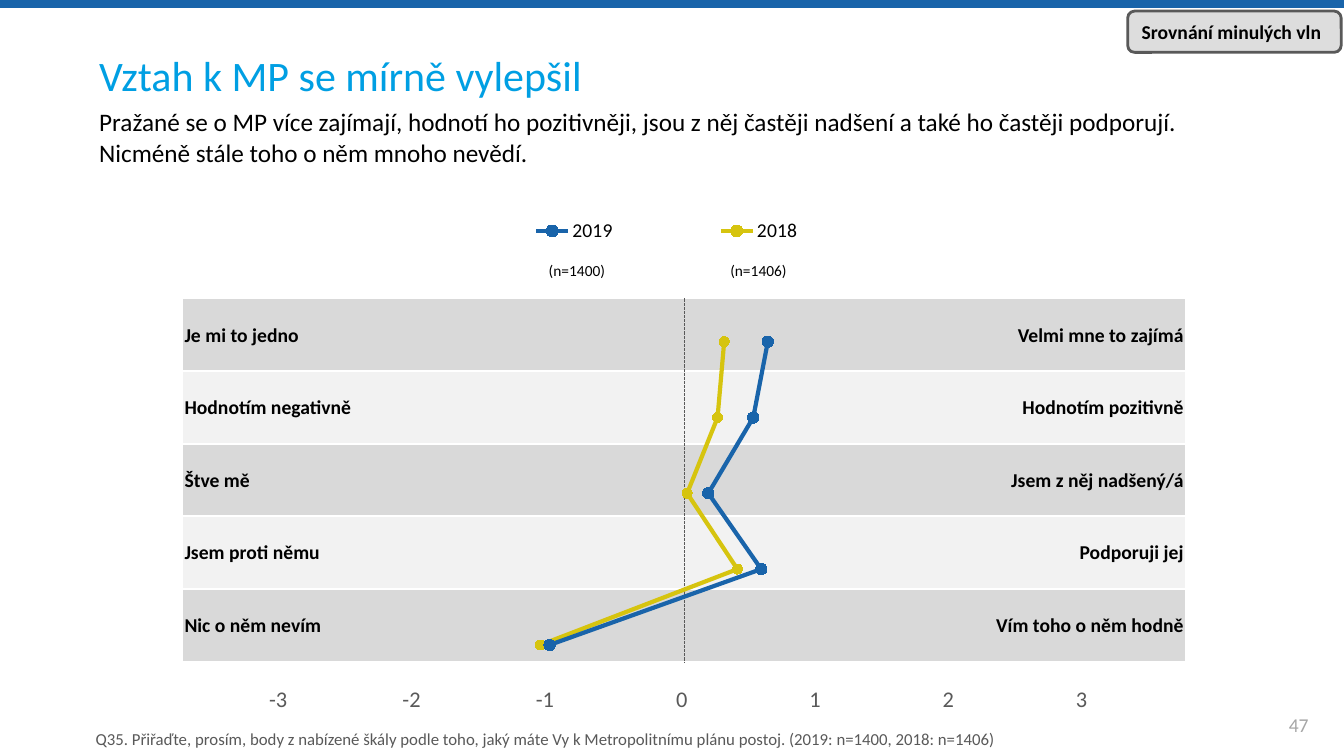
from dataclasses import dataclass

import pptx
import pptx.chart.data
import pptx.dml.color
import pptx.enum.chart
import pptx.enum.dml
import pptx.enum.shapes
import pptx.enum.text
import pptx.oxml
import pptx.oxml.ns
import pptx.util

Cm, Pt = pptx.util.Cm, pptx.util.Pt
RGB = pptx.dml.color.RGBColor.from_string
ALIGN, ANCHOR = pptx.enum.text.PP_ALIGN, pptx.enum.text.MSO_ANCHOR
SHAPE = pptx.enum.shapes.MSO_SHAPE
qn, nsdecls, parse_xml = pptx.oxml.ns.qn, pptx.oxml.ns.nsdecls, pptx.oxml.parse_xml


@dataclass(frozen=True)
class Theme:
    font: str = "Calibri"
    blue: str = "1964AA"
    cyan: str = "009FE3"
    yellow: str = "D6C40F"
    black: str = "000000"
    white: str = "FFFFFF"
    grey: str = "595959"
    pale: str = "A6A6A6"
    bands: tuple = ("D9D9D9", "F2F2F2")
    title: int = 30
    body: int = 18
    scale: int = 16
    label: int = 14
    note: int = 12
    base: int = 11


T = Theme()


def write(tf, text, size=T.label, color=T.black, bold=False, align=ALIGN.LEFT,
          anchor=None, margins=None, wrap=True):
    """Fill a text frame; margins are left, top, right, bottom in cm."""
    p = tf.paragraphs[0]
    p.alignment = align
    p.space_before = Pt(0)
    r = p.add_run()
    r.text = text
    r.font.name, r.font.size, r.font.bold = T.font, Pt(size), bold
    r.font.color.rgb = RGB(color)
    if anchor is not None:
        tf.vertical_anchor = anchor
        tf.auto_size = pptx.enum.text.MSO_AUTO_SIZE.NONE
        tf.word_wrap = wrap
    if margins:
        tf.margin_left, tf.margin_top, tf.margin_right, tf.margin_bottom = map(Cm, margins)


def add_grid(s, x, y, widths, row_height, n_rows, anchor, border):
    """Add an unstyled table with white lines above and below each row."""
    frame = s.shapes.add_table(n_rows, len(widths), Cm(x), Cm(y),
                               Cm(sum(widths)), Cm(row_height * n_rows))
    frame.element.find(".//" + qn("a:tableStyleId")).text = "{2D5ABB26-0587-4C30-8999-92F81FD0307C}"
    table = frame.table
    table.first_row = table.horz_banding = False
    for col, width in zip(table.columns, widths):
        col.width = Cm(width)
    for row in table.rows:
        row.height = Cm(row_height)
        for cell in row.cells:
            cell.vertical_anchor = anchor
            cell.margin_left = cell.margin_top = cell.margin_right = Cm(0.03)
            cell.margin_bottom = 0
            cell.fill.background()
            tcPr = cell.fill._xPr
            for i, side in enumerate(("lnT", "lnB")):
                tcPr.insert(i, parse_xml(
                    f'<a:{side} {nsdecls("a")} w="{Pt(border)}"><a:solidFill>'
                    f'<a:srgbClr val="{T.white}"/></a:solidFill></a:{side}>'))
    return table


prs = pptx.Presentation()
prs.slide_width, prs.slide_height = Cm(33.87), Cm(19.05)
s = prs.slides.add_slide(prs.slide_layouts[1])

# Top bar, title and lead text
bar = s.shapes.add_shape(SHAPE.RECTANGLE, 0, 0, prs.slide_width, Cm(0.2))
bar.shadow.inherit = False
bar.fill.solid()
bar.fill.fore_color.rgb = RGB(T.blue)
bar.line.fill.background()

title, body = s.placeholders
for ph, top, height in ((title, 1.04, 1.7), (body, 2.69, 1.83)):
    ph.left, ph.top, ph.width, ph.height = 0, Cm(top), prs.slide_width, Cm(height)
write(title.text_frame, "Vztah k MP se mírně vylepšil", size=T.title, color=T.cyan,
      anchor=ANCHOR.MIDDLE, margins=(2.5, 0, 0, 0))
pPr = body.text_frame.paragraphs[0]._p.get_or_add_pPr()
pPr.set("marL", "0")
pPr.set("indent", "0")
pPr.append(parse_xml(f'<a:buNone {nsdecls("a")}/>'))
write(body.text_frame,
      "Pražané se o MP více zajímají, hodnotí ho pozitivněji, jsou z něj častěji nadšení "
      "a také ho častěji podporují. Nicméně stále toho o něm mnoho nevědí.",
      size=T.body, anchor=ANCHOR.TOP, margins=(2.5, 0, 2.5, 0))

# Opposite statements
statements = [
    ("Je mi to jedno", "Velmi mne to zajímá"),
    ("Hodnotím negativně", "Hodnotím pozitivně"),
    ("Štve mě", "Jsem z něj nadšený/á"),
    ("Jsem proti němu", "Podporuji jej"),
    ("Nic o něm nevím", "Vím toho o něm hodně"),
]
table = add_grid(s, 4.62, 7.52, [12.62] * 2, 1.83, len(statements), ANCHOR.MIDDLE, 1.5)
for i, pair in enumerate(statements):
    for j, text in enumerate(pair):
        cell = table.cell(i, j)
        cell.fill.solid()
        cell.fill.fore_color.rgb = RGB(T.bands[i % 2])
        write(cell.text_frame, text, bold=True, align=(ALIGN.LEFT, ALIGN.RIGHT)[j])

# Scale below the chart and sample sizes below the legend
scale = add_grid(s, 3.91, 17.25, [3.36] * 7, 0.71, 1, ANCHOR.BOTTOM, 1)
for j, value in enumerate(range(-3, 4)):
    write(scale.cell(0, j).text_frame, str(value), size=T.scale, color=T.grey, align=ALIGN.RIGHT)

samples = add_grid(s, 12.62, 6.38, [3.84, 4.32], 0.69, 1, ANCHOR.BOTTOM, 1)
samples.cell(0, 1).margin_left = Cm(1.02)
for j, text in enumerate(("(n=1400)", "(n=1406)")):
    write(samples.cell(0, j).text_frame, text, size=T.base, align=ALIGN.CENTER)

# Page number and question
page = s.shapes.add_textbox(Cm(31.6), Cm(17.75), Cm(2.26), Cm(1.02))
write(page.text_frame, "47", color=T.pale, align=ALIGN.CENTER, anchor=ANCHOR.MIDDLE)
question = s.shapes.add_textbox(Cm(2.41), Cm(18.21), Cm(25.55), Cm(0.84))
write(question.text_frame,
      "Q35. Přiřaďte, prosím, body z nabízené škály podle toho, jaký máte Vy "
      "k Metropolitnímu plánu postoj. (2019: n=1400, 2018: n=1406)",
      size=T.note, color=T.grey, anchor=ANCHOR.MIDDLE, margins=(0, 0, 0, 0))

# Zero line
zero = s.shapes.add_connector(pptx.enum.shapes.MSO_CONNECTOR.STRAIGHT,
                              Cm(17.25), Cm(7.52), Cm(17.25), Cm(16.69))
zero.line.color.rgb = RGB(T.grey)
zero.line.width = Pt(0.75)
zero.line.dash_style = pptx.enum.dml.MSO_LINE.SQUARE_DOT
zero.element.spPr.append(parse_xml(f'<a:effectLst {nsdecls("a")}/>'))

# Profile chart
waves = [
    ("2019", (0.64, 0.53, 0.19, 0.59, -1.01), T.blue, 8),
    ("2018", (0.31, 0.26, 0.03, 0.41, -1.08), T.yellow, 7),
]
data = pptx.chart.data.XyChartData()
for name, scores, _, _ in waves:
    series = data.add_series(name)
    for i, score in enumerate(scores, start=1):
        series.add_data_point(score, 20 * i)
chart = s.shapes.add_chart(pptx.enum.chart.XL_CHART_TYPE.XY_SCATTER_LINES, Cm(1.14), Cm(4.72),
                           Cm(31.65), Cm(12.93), data).chart
chart.has_title = False
chart.font.name, chart.font.size = T.font, Pt(T.body)
chart.font.color.rgb = RGB(T.black)
for axis, low, high, step in ((chart.category_axis, -3, 3, 1), (chart.value_axis, 10, 110, 20)):
    axis.minimum_scale, axis.maximum_scale, axis.major_unit = low, high, step
    axis.has_major_gridlines = False
    axis.visible = False
chart.value_axis.reverse_order = True
chart.plots[0].vary_by_categories = False
for series, (_, _, color, size) in zip(chart.plots[0].series, waves):
    series.smooth = False
    series.format.line.color.rgb = RGB(color)
    series.format.line.width = Pt(3)
    series.marker.style = pptx.enum.chart.XL_MARKER_STYLE.CIRCLE
    series.marker.size = size
    series.marker.format.fill.solid()
    series.marker.format.fill.fore_color.rgb = RGB(color)
    series.marker.format.line.color.rgb = RGB(color)

chart.has_legend = True
chart.legend.position = pptx.enum.chart.XL_LEGEND_POSITION.TOP
chart.legend.include_in_layout = False
chart.legend.font.name, chart.legend.font.size = T.font, Pt(T.label)
chart_xml = chart.element
for tag, index, target, box in (("c:plotArea", 0, '<c:layoutTarget val="inner"/>', (0.192, 0.227, 0.632, 0.739)),
                                ("c:legend", 1, "", (0.31, 0.05, 0.37, 0.07))):
    parent = chart_xml.find(".//" + qn(tag))
    for old in parent.findall(qn("c:layout")):
        parent.remove(old)
    modes = '<c:xMode val="edge"/><c:yMode val="edge"/>'
    sizes = "".join(f'<c:{key} val="{value}"/>' for key, value in zip("xywh", box))
    parent.insert(index, parse_xml(f'<c:layout {nsdecls("c")}><c:manualLayout>{target}{modes}{sizes}'
                                   '</c:manualLayout></c:layout>'))

# Badge
badge = s.shapes.add_shape(SHAPE.ROUNDED_RECTANGLE, Cm(28.42), Cm(0.28), Cm(5.38), Cm(1.04))
badge.shadow.inherit = False
badge.fill.solid()
badge.fill.fore_color.rgb = RGB(T.grey)
badge.element.spPr.find(".//" + qn("a:srgbClr")).append(
    parse_xml(f'<a:alpha {nsdecls("a")} val="20000"/>'))
badge.line.color.rgb = RGB(T.grey)
badge.line.width = Pt(2)
write(badge.text_frame, "Srovnání minulých vln", bold=True, align=ALIGN.CENTER,
      anchor=ANCHOR.MIDDLE, margins=(0.1, 0, 0.25, 0), wrap=False)

prs.save("out.pptx")
